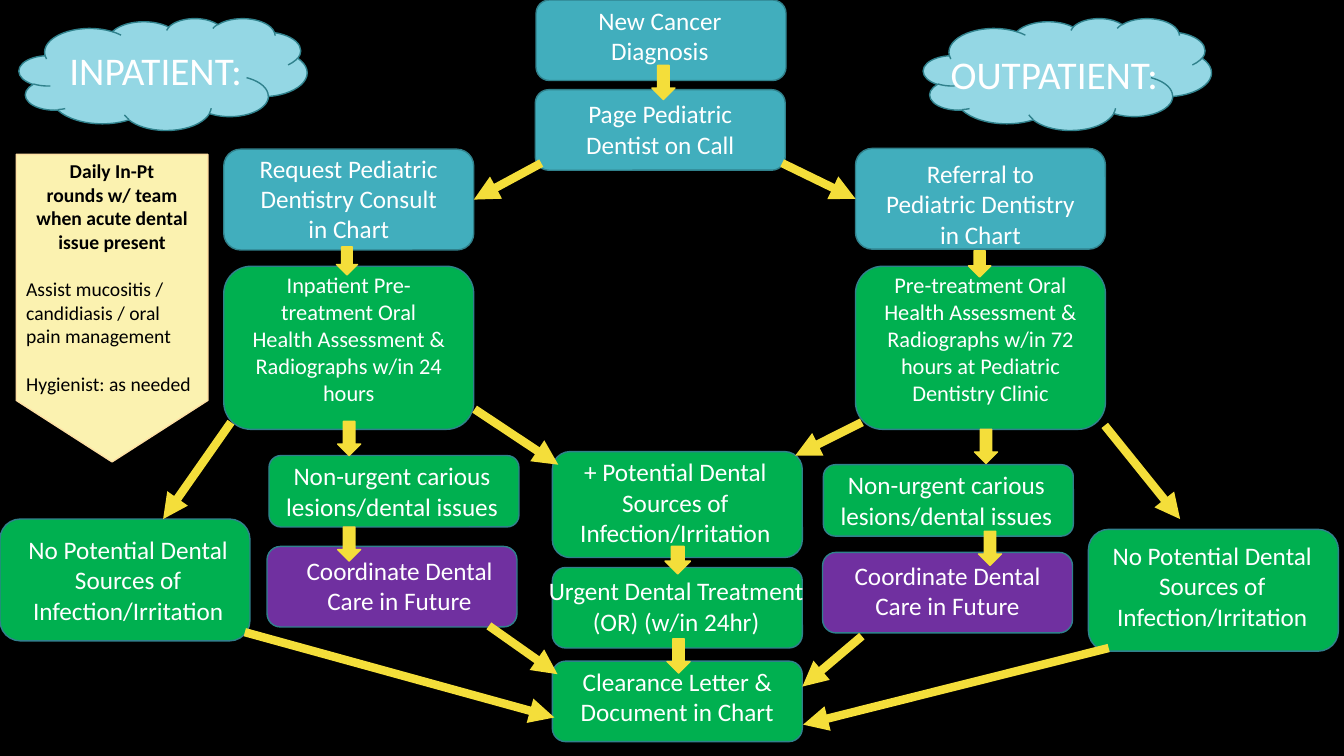
from dataclasses import dataclass

import pptx
import pptx.dml.color
import pptx.enum.shapes
import pptx.enum.text
import pptx.oxml
import pptx.oxml.ns
import pptx.util

Cm = pptx.util.Cm
Pt = pptx.util.Pt
RGB = pptx.dml.color.RGBColor.from_string
PRESET = pptx.enum.shapes.MSO_SHAPE
ANCHOR = pptx.enum.text.MSO_ANCHOR
ALIGN = pptx.enum.text.PP_ALIGN


@dataclass(frozen=True)
class Theme:
    background: str = "000000"
    cloud: str = "94D7E4"
    intake: str = "41AEBD"
    care: str = "00B050"
    future: str = "7030A0"
    outline: str = "30818C"
    arrow: str = "F4DE3A"
    note: str = "FBF2B0"
    note_outline: str = "FEE0A4"
    light: str = "FFFFFF"
    dark: str = "000000"
    font: str = "Calibri"
    heading: int = 28
    label: int = 18
    detail: int = 16
    note_size: int = 14


theme = Theme()
presentation = pptx.Presentation()
presentation.slide_width = Cm(33.87)
presentation.slide_height = Cm(19.05)
slide = presentation.slides.add_slide(presentation.slide_layouts[6])
slide.background.fill.solid()
slide.background.fill.fore_color.rgb = RGB(theme.background)


def add_filled_shape(preset, left, top, width, height, fill, outline):
    shape = slide.shapes.add_shape(preset, Cm(left), Cm(top), Cm(width), Cm(height))
    shape.shadow.inherit = False
    shape.fill.solid()
    shape.fill.fore_color.rgb = RGB(fill)
    shape.line.color.rgb = RGB(outline)
    shape.line.width = Pt(1)
    return shape


def write_paragraph(shape, text, size=theme.label, color=theme.light, bold=False,
                    align=ALIGN.CENTER, space_before=0):
    """Fill the shape's empty first paragraph, or add one after its text."""
    frame = shape.text_frame
    paragraph = frame.add_paragraph() if frame.text else frame.paragraphs[0]
    paragraph.alignment = align
    if space_before:
        paragraph.space_before = Pt(space_before)
    run = paragraph.add_run()
    run.text = text
    run.font.name = theme.font
    run.font.size = Pt(size)
    run.font.bold = bold
    run.font.color.rgb = RGB(color)


# Headings of the two pathways
for heading, left, drop, shift in (("INPATIENT:", 0.48, 0, 0.07),
                                   ("OUTPATIENT:", 23.27, 0.2, -0.07)):
    cloud = add_filled_shape(PRESET.CLOUD, left, 0.46, 7.26, 2.82, theme.cloud, theme.outline)
    frame = cloud.text_frame
    frame.word_wrap = False
    frame.vertical_anchor = ANCHOR.MIDDLE
    frame.margin_left, frame.margin_right = Cm(0.25 + shift), Cm(0.25 - shift)
    frame.margin_top, frame.margin_bottom = Cm(drop), Cm(0.1)
    write_paragraph(cloud, heading, size=theme.heading)

# Steps: name, left, top, height, fill, text, side margin, top margin, sideways shift
BOX_WIDTH = 6.3
NARROW, WIDE = 0.58, 0.1
no_source = "No Potential Dental Sources of Infection/Irritation"
non_urgent = "Non-urgent carious lesions/dental issues"
coordinate = "Coordinate Dental Care in Future"
steps = [
    ("diagnosis", 13.51, 0, 2.03, theme.intake, "New Cancer Diagnosis", NARROW, 0.03, -0.03),
    ("page", 13.49, 2.26, 2.03, theme.intake, "Page Pediatric Dentist on Call", NARROW, 0.13, 0),
    ("consult", 5.64, 3.76, 2.54, theme.intake,
     "Request Pediatric Dentistry Consult in Chart", NARROW, -0.02, 0),
    ("referral", 21.56, 3.74, 2.54, theme.intake,
     "Referral to Pediatric Dentistry in Chart", NARROW, 0.13, 0),
    ("inpatient assessment", 5.64, 6.71, 4.11, theme.care,
     "Inpatient Pre-treatment Oral Health Assessment & Radiographs w/in 24 hours",
     0.48, -0.07, 0),
    ("outpatient assessment", 21.56, 6.71, 4.11, theme.care,
     "Pre-treatment Oral Health Assessment & Radiographs w/in 72 hours at Pediatric "
     "Dentistry Clinic", 0.48, -0.07, 0),
    ("inpatient clear", 0, 13.08, 3.07, theme.care, no_source, WIDE, 0.24, 0.08),
    ("outpatient clear", 27.43, 13.34, 3.07, theme.care, no_source, WIDE, 0.13, -0.03),
    ("sources", 13.92, 11.38, 2.67, theme.care,
     "+ Potential Dental Sources of Infection/Irritation", WIDE, 0, -0.05),
    ("urgent", 13.92, 14.3, 2.03, theme.care, None, 0, 0, 0),
    ("clearance", 13.92, 16.66, 2.03, theme.care,
     "Clearance Letter & Document in Chart", NARROW, 0.03, 0),
    ("inpatient future", 6.73, 13.77, 2.03, theme.future, coordinate, NARROW, 0.13, 0.19),
    ("inpatient non-urgent", 6.78, 11.48, 1.8, theme.care, non_urgent, WIDE, 0.04, -0.05),
    ("outpatient future", 20.73, 13.92, 2.03, theme.future, coordinate, NARROW, 0.1, 0),
    ("outpatient non-urgent", 20.75, 11.71, 1.8, theme.care, non_urgent, WIDE, 0.04, -0.05),
]
boxes = {}
for name, left, top, height, fill, text, side, margin_top, shift in steps:
    box = add_filled_shape(PRESET.ROUNDED_RECTANGLE, left, top, BOX_WIDTH, height,
                           fill, theme.outline)
    boxes[name] = box
    if text is None:
        continue
    frame = box.text_frame
    frame.word_wrap = True
    frame.vertical_anchor = ANCHOR.TOP
    frame.margin_left, frame.margin_right = Cm(side + shift), Cm(side - shift)
    frame.margin_top, frame.margin_bottom = Cm(margin_top), 0
    write_paragraph(box, text, size=theme.detail if "assessment" in name else theme.label)

# The urgent step's label is wider than its box
urgent_label = slide.shapes.add_textbox(Cm(13.41), Cm(14.38), Cm(7.26), Cm(1.8))
urgent_label.text_frame.word_wrap = True
write_paragraph(urgent_label, "Urgent Dental Treatment (OR) (w/in 24hr)")

# Short arrows between stacked steps: left, top, width, height
down_arrows = [
    (16.43, 1.65, 0.58, 0.86),
    (24.41, 6.32, 0.56, 0.66),
    (24.56, 10.82, 0.58, 0.86),
    (8.48, 6.22, 0.53, 0.71),
    (8.51, 10.62, 0.58, 0.86),
    (8.51, 13.28, 0.58, 0.86),
    (24.66, 13.39, 0.58, 0.86),
    (16.81, 16.1, 0.58, 0.86),
    (16.76, 13.77, 0.64, 0.69),
]
for position in down_arrows:
    add_filled_shape(PRESET.DOWN_ARROW, *position, theme.arrow, theme.arrow)

# Long arrows: start x, start y, end x, end y, joined step and its side
long_arrows = [
    (27.84, 10.72, 29.74, 13.08, None),
    (11.96, 10.31, 14.07, 11.71, None),
    (21.72, 10.64, 20.04, 11.48, None),
    (6.17, 15.93, 13.97, 18.08, None),
    (5.82, 10.64, 4.11, 13.08, None),
    (12.32, 15.77, 14.05, 16.99, None),
    (19.71, 4.11, 21.56, 5, ("referral", 1)),
    (21.72, 16.03, 20.22, 17.3, None),
    (27.94, 16.33, 20.24, 18.26, None),
    (13.64, 4.11, 11.94, 5.03, ("consult", 3)),
]
for start_x, start_y, end_x, end_y, joint in long_arrows:
    connector = slide.shapes.add_connector(
        pptx.enum.shapes.MSO_CONNECTOR.STRAIGHT,
        Cm(start_x), Cm(start_y), Cm(end_x), Cm(end_y))
    if joint:
        connector.end_connect(boxes[joint[0]], joint[1])
    connector.line.color.rgb = RGB(theme.arrow)
    connector.line.width = Pt(6)
    namespace = pptx.oxml.ns.nsdecls("a")
    connector.line._get_or_add_ln().append(
        pptx.oxml.parse_xml(f'<a:tailEnd {namespace} type="triangle"/>'))
    connector._element.spPr.append(pptx.oxml.parse_xml(f"<a:effectLst {namespace}/>"))

# Daily rounds note
note = add_filled_shape(PRESET.FLOWCHART_OFFPAGE_CONNECTOR, 0.41, 3.89, 4.83, 7.75,
                        theme.note, theme.note_outline)
note.text_frame.word_wrap = True
note.text_frame.vertical_anchor = ANCHOR.TOP
for text, bold, align, gap in (
    ("Daily In-Pt", True, ALIGN.CENTER, 0),
    ("rounds w/ team when acute dental issue present", True, ALIGN.CENTER, 0),
    ("Assist mucositis / candidiasis / oral pain management", False, ALIGN.LEFT, 17),
    ("Hygienist: as needed", False, ALIGN.LEFT, 17),
):
    write_paragraph(note, text, size=theme.note_size, color=theme.dark, bold=bold,
                    align=align, space_before=gap)

presentation.save("out.pptx")
